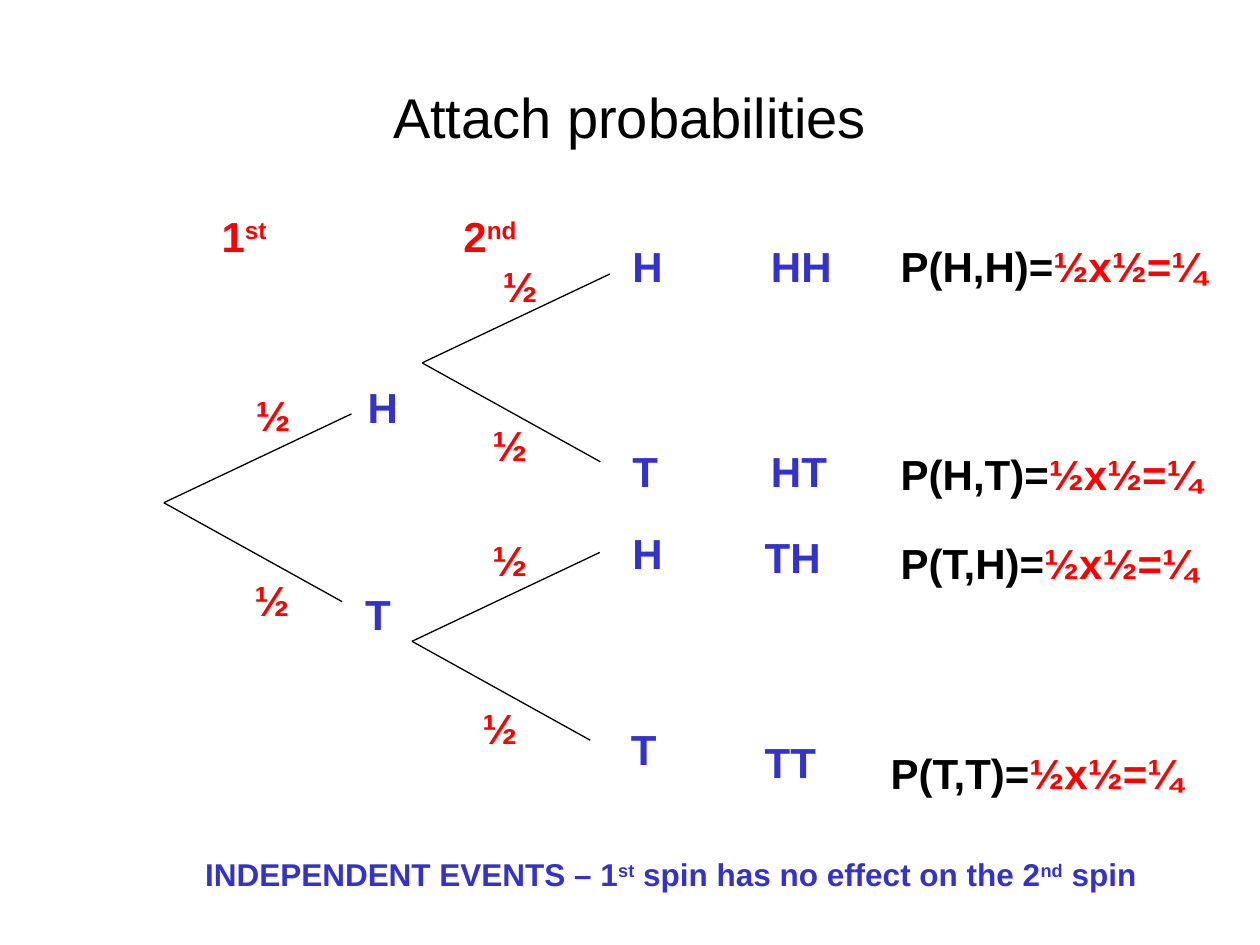
from typing import NamedTuple

from lxml import etree
from pptx import Presentation
from pptx import util as u
from pptx.dml.color import RGBColor
from pptx.enum import shapes, text
from pptx.oxml.ns import qn

BLACK = RGBColor(0x00, 0x00, 0x00)
RED = RGBColor(0xFF, 0x00, 0x00)
BLUE = RGBColor(0x33, 0x33, 0xCC)

CELL = u.Inches(0.1)  # the slide is a grid of 100 columns by 75 rows
COLS, ROWS = 100, 75
LABEL_ROWS = 5


class Run(NamedTuple):
    text: str
    color: RGBColor
    raised: bool = False


class Label(NamedTuple):
    col: float
    row: float
    cols: float
    runs: list[Run]
    rows: float = LABEL_ROWS
    size: int = 24
    bold: bool = True


class Fork(NamedTuple):
    col: float
    row: float


class Outcome(NamedTuple):
    first: str
    second: str
    col: float
    row: float
    cols: float
    sum_col: float
    sum_row: float
    sum_cols: float


FORKS = [Fork(13, 39.9), Fork(33.5, 28.8), Fork(32.7, 50.9)]
BRANCHES = [(14.9, -7.05), (14.15, 7.85)]  # columns and rows from the fork

NODE_COLS = {"H": 4.4, "T": 4}
NODES = [
    ("H", 28.2, 29.8), ("T", 28, 46.2),
    ("H", 49.2, 18.6), ("T", 49.2, 34.9),
    ("H", 49.2, 41.4), ("T", 49.1, 56.9),
]
HALVES = [(19.3, 30.4), (19.2, 45.1), (38.9, 20.2),
          (38.1, 32.8), (38.1, 41.9), (37.3, 55.3)]
OUTCOMES = [
    Outcome("H", "H", 60.2, 18.6, 6.8, 70.5, 18.6, 26.3),
    Outcome("H", "T", 60.2, 34.9, 6.5, 70.5, 35.1, 25.9),
    Outcome("T", "H", 59.7, 41.7, 6.5, 70.5, 42.2, 25.9),
    Outcome("T", "T", 59.7, 58, 6.1, 69.7, 58.8, 25.5),
]
STAGES = [("1", "st", 16.6, 5.9), ("2", "nd", 35.8, 7.5)]


def grid(n: float) -> int:
    return round(n * CELL)


def add_label(s, label: Label):
    sp = s.shapes.add_textbox(grid(label.col), grid(label.row),
                              grid(label.cols), grid(label.rows))
    tf = sp.text_frame
    tf.word_wrap = False
    tf.auto_size = text.MSO_AUTO_SIZE.SHAPE_TO_FIT_TEXT
    p = tf.paragraphs[0]
    p.font.name = "Arial"
    p.font.size = u.Pt(label.size)
    p.font.bold = label.bold
    for run in label.runs:
        r = p.add_run()
        r.text = run.text
        r.font.color.rgb = run.color
        if run.raised:
            r._r.get_or_add_rPr().set("baseline", "30000")
    return sp


def add_title(s, title: str) -> None:
    tf = add_label(s, Label(5, 3, 90, [Run(title, BLACK)], 12.5, 32, False)).text_frame
    tf.auto_size = text.MSO_AUTO_SIZE.NONE
    tf.word_wrap = True
    tf.vertical_anchor = text.MSO_ANCHOR.MIDDLE
    tf.paragraphs[0].alignment = text.PP_ALIGN.CENTER


def add_fork(s, fork: Fork) -> None:
    group = s.shapes.add_group_shape()
    for cols, rows in BRANCHES:
        line = group.shapes.add_connector(
            shapes.MSO_CONNECTOR.STRAIGHT, grid(fork.col), grid(fork.row),
            grid(fork.col + cols), grid(fork.row + rows))
        line.line.color.rgb = BLACK
        line.line.width = u.Pt(0.75)
        etree.SubElement(line._element.spPr, qn("a:effectLst"))


def add_outcome(s, o: Outcome) -> None:
    add_label(s, Label(o.col, o.row, o.cols, [Run(o.first + o.second, BLUE)]))
    add_label(s, Label(o.sum_col, o.sum_row, o.sum_cols, [
        Run(f"P({o.first},{o.second})=", BLACK), Run("½x½=¼", RED)]))


def main() -> None:
    prs = Presentation()
    prs.slide_width, prs.slide_height = grid(COLS), grid(ROWS)
    s = prs.slides.add_slide(prs.slide_layouts[6])

    add_title(s, "Attach probabilities")
    for fork in FORKS:
        add_fork(s, fork)
    for side, col, row in NODES:
        add_label(s, Label(col, row, NODE_COLS[side], [Run(side, BLUE)]))
    for number, ending, col, cols in STAGES:
        add_label(s, Label(col, 16.2, cols, [Run(number, RED), Run(ending, RED, True)]))
    for col, row in HALVES:
        add_label(s, Label(col, row, 4.8, [Run("½", RED)]))
    for outcome in OUTCOMES:
        add_outcome(s, outcome)
    add_label(s, Label(15.3, 67.4, 76.4, [
        Run("INDEPENDENT EVENTS – 1", BLUE), Run("st", BLUE, True),
        Run(" spin has no effect on the 2", BLUE), Run("nd", BLUE, True),
        Run(" spin", BLUE)], rows=4, size=18))

    prs.save("out.pptx")


if __name__ == "__main__":
    main()
